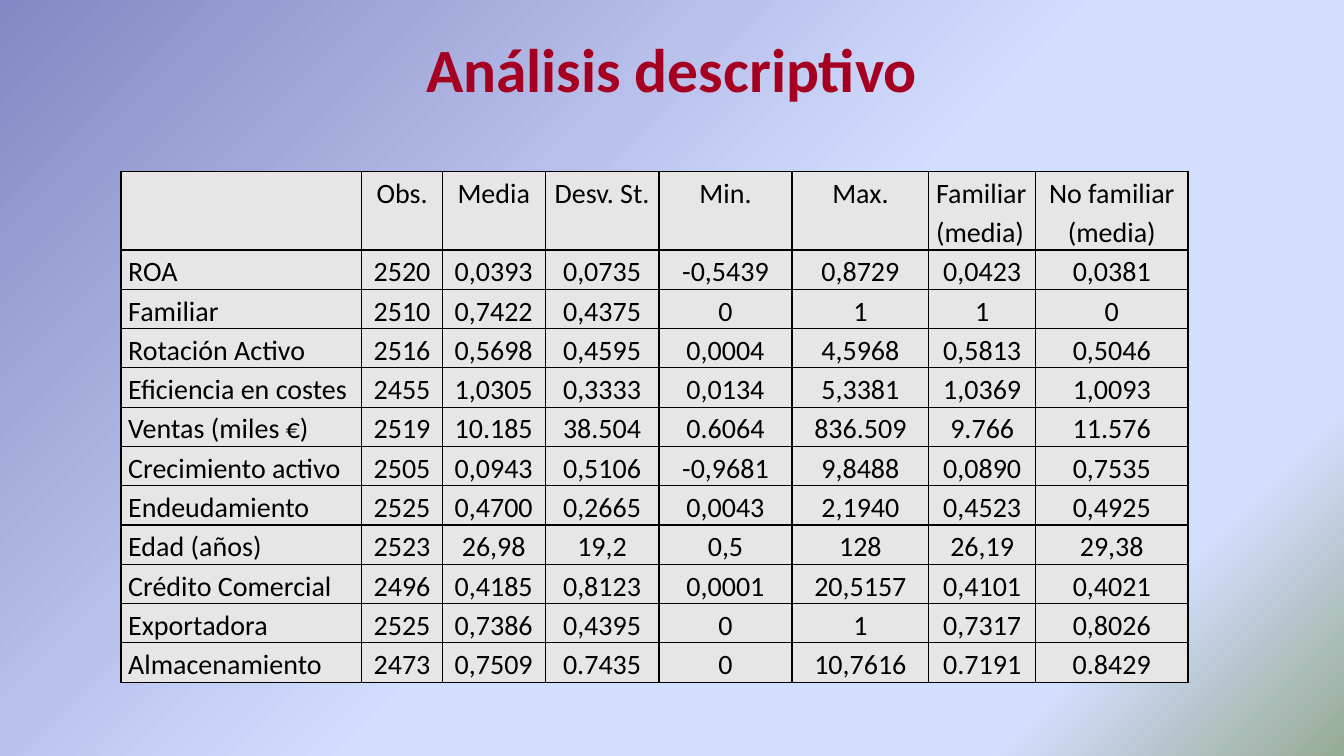
"""Builds the "Análisis descriptivo" slide: a title above a table of descriptive statistics."""
from copy import deepcopy

from lxml import etree
from pptx import Presentation
from pptx.dml.color import RGBColor
from pptx.enum.text import MSO_ANCHOR, PP_ALIGN
from pptx.oxml.ns import qn
from pptx.util import Cm, Pt

LEFT, CENTER, JUSTIFY = PP_ALIGN.LEFT, PP_ALIGN.CENTER, PP_ALIGN.JUSTIFY
MIDDLE = MSO_ANCHOR.MIDDLE

TITLE = "Análisis descriptivo"
HEADINGS = ["", "Obs.", "Media", "Desv. St.", "Min.", "Max.", "Familiar (media)", "No familiar (media)"]
VARIABLES = [
    ("ROA", "2520", "0,0393", "0,0735", "-0,5439", "0,8729", "0,0423", "0,0381"),
    ("Familiar", "2510", "0,7422", "0,4375", "0", "1", "1", "0"),
    ("Rotación Activo", "2516", "0,5698", "0,4595", "0,0004", "4,5968", "0,5813", "0,5046"),
    ("Eficiencia en costes", "2455", "1,0305", "0,3333", "0,0134", "5,3381", "1,0369", "1,0093"),
    ("Ventas (miles €)", "2519", "10.185", "38.504", "0.6064", "836.509", "9.766", "11.576"),
    ("Crecimiento activo", "2505", "0,0943", "0,5106", "-0,9681", "9,8488", "0,0890", "0,7535"),
    ("Endeudamiento", "2525", "0,4700", "0,2665", "0,0043", "2,1940", "0,4523", "0,4925"),
    ("Edad (años)", "2523", "26,98", "19,2", "0,5", "128", "26,19", "29,38"),
    ("Crédito Comercial", "2496", "0,4185", "0,8123", "0,0001", "20,5157", "0,4101", "0,4021"),
    ("Exportadora", "2525", "0,7386", "0,4395", "0", "1", "0,7317", "0,8026"),
    ("Almacenamiento", "2473", "0,7509", "0.7435", "0", "10,7616", "0.7191", "0.8429"),
]

THEME = {
    "title": {"name": "Calibri", "size": Pt(44), "bold": True, "color": "A50021"},
    "body": {"name": "Calibri", "size": Pt(20), "bold": False, "color": "000000"},
    "cell": "E7E6E6",
    "border": "000000",
    "border_width": Pt(1),
    "background": [(0, "8488C4"), (0.53, "D4DEFF"), (0.83, "D4DEFF"), (1, "96AB94")],
}
COLUMN_WIDTHS = [Cm(w) for w in (6.07, 2.03, 2.59, 2.87, 3.35, 3.45, 2.69, 3.84)]
LINE_HEIGHT = Cm(0.99)
CELL_FORMAT = {"margin_left": Cm(0.18), "margin_right": Cm(0.18), "margin_top": 0, "margin_bottom": 0}


def write(frame, text, style, align, spacing):
    paragraph = frame.paragraphs[0]
    paragraph.alignment, paragraph.line_spacing = align, spacing
    run = paragraph.add_run()
    run.text = text
    for attribute in ("name", "size", "bold"):
        setattr(run.font, attribute, style[attribute])
    run.font.color.rgb = RGBColor.from_string(style["color"])


def paint_background(slide):
    fill = slide.background.fill
    fill.gradient()
    fill.gradient_angle = 315
    stop_list = slide.element.find(".//" + qn("a:gsLst"))
    for _ in THEME["background"][2:]:
        stop_list.append(deepcopy(stop_list[0]))
    for stop, (position, color) in zip(fill.gradient_stops, THEME["background"]):
        stop.position = position
        stop.color.rgb = RGBColor.from_string(color)


def add_borders(cell):
    properties = cell._tc.get_or_add_tcPr()
    for index, side in enumerate(("a:lnL", "a:lnR", "a:lnT", "a:lnB")):
        line = etree.Element(qn(side), w=str(THEME["border_width"]))
        solid = etree.SubElement(line, qn("a:solidFill"))
        etree.SubElement(solid, qn("a:srgbClr"), val=THEME["border"])
        properties.insert(index, line)


def alignment(row, column):
    if row == 0 and HEADINGS[column] == "Familiar (media)":
        return LEFT
    return CENTER if column else JUSTIFY


def add_statistics(slide):
    rows = [HEADINGS, *VARIABLES]
    heights = [2 * LINE_HEIGHT] + [LINE_HEIGHT] * len(VARIABLES)
    table = slide.shapes.add_table(len(rows), len(HEADINGS), Cm(3.05), Cm(4.32),
                                   sum(COLUMN_WIDTHS), sum(heights)).table
    table.first_row = table.horz_banding = False
    for column, width in zip(table.columns, COLUMN_WIDTHS):
        column.width = width
    for r, (values, height) in enumerate(zip(rows, heights)):
        table.rows[r].height = height
        for c, value in enumerate(values):
            cell = table.cell(r, c)
            for attribute, setting in CELL_FORMAT.items():
                setattr(cell, attribute, setting)
            cell.fill.solid()
            cell.fill.fore_color.rgb = RGBColor.from_string(THEME["cell"])
            add_borders(cell)
            if value:
                write(cell.text_frame, value, THEME["body"], alignment(r, c), 1.15)


def main():
    presentation = Presentation()
    presentation.slide_width, presentation.slide_height = Cm(33.87), Cm(19.05)
    slide = presentation.slides.add_slide(presentation.slide_layouts[6])
    paint_background(slide)
    heading = slide.shapes.add_textbox(Cm(2.33), 0, Cm(29.21), Cm(3.68)).text_frame
    heading.word_wrap, heading.vertical_anchor = True, MIDDLE
    write(heading, TITLE, THEME["title"], CENTER, 0.9)
    add_statistics(slide)
    presentation.save("out.pptx")


if __name__ == "__main__":
    main()
